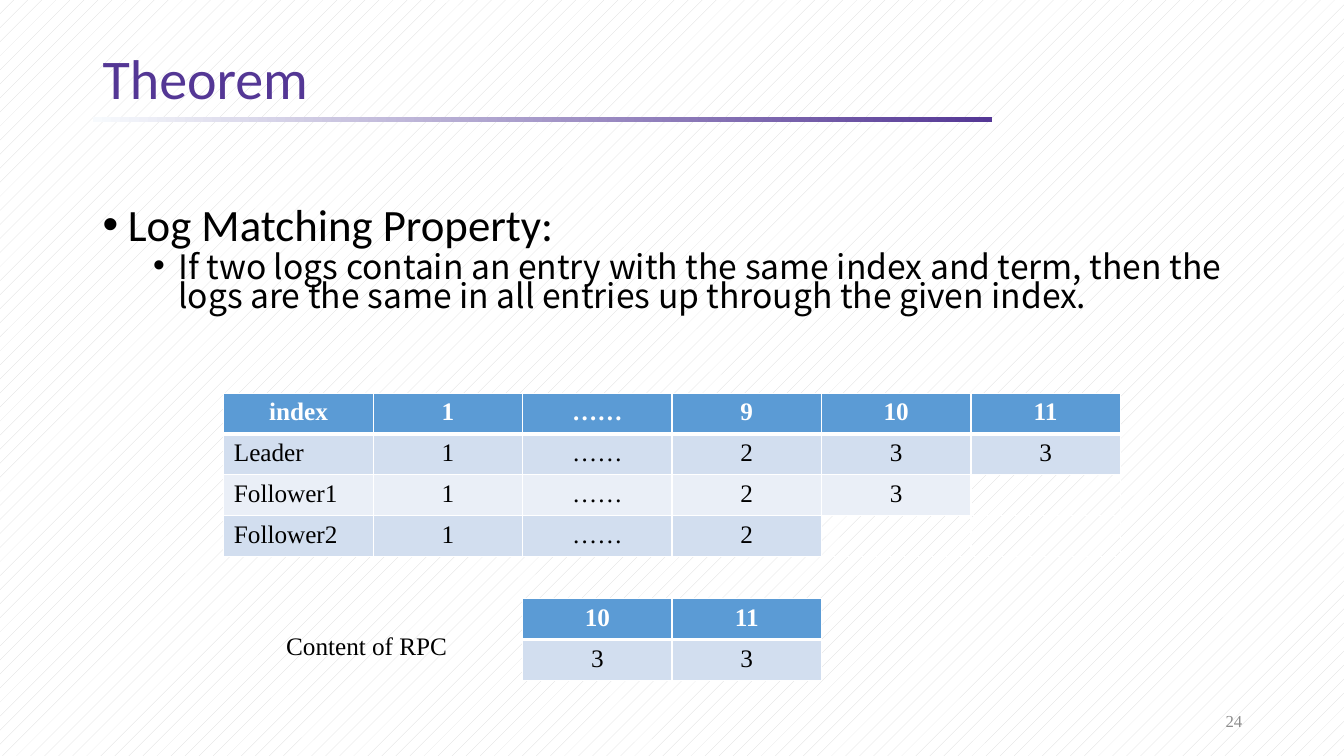
from lxml import etree
from pptx import Presentation
from pptx.dml.color import RGBColor
from pptx.enum.dml import MSO_PATTERN
from pptx.enum.shapes import MSO_SHAPE
from pptx.enum.text import MSO_ANCHOR, PP_ALIGN
from pptx.oxml.ns import qn
from pptx.util import Inches, Pt

LEFT, CENTER, RIGHT = PP_ALIGN.LEFT, PP_ALIGN.CENTER, PP_ALIGN.RIGHT
TOP, MIDDLE = MSO_ANCHOR.TOP, MSO_ANCHOR.MIDDLE
SERIF = "Times New Roman"
SANS = "Calibri"

# Content
TITLE = "Theorem"
# text, font, size, level, left indent, line spacing, space before
BULLETS = [
    ("Log Matching Property:", SANS, 32, 0, 0.25, 0.9, 0),
    ("If two logs contain an entry with the same index and term, "
     "then the logs are the same in all entries up through the given index.",
     "Noto Sans CJK SC", 24, 1, 0.75, 0.72, 4),
]
LOG_ROWS = [
    ["index", "1", "……", "9", "10", "11"],
    ["Leader", "1", "……", "2", "3", "3"],
    ["Follower1", "1", "……", "2", "3", ""],
    ["Follower2", "1", "……", "2", "", ""],
]
RPC_LABEL = "Content of RPC"
RPC_ROWS = [["10", "11"], ["3", "3"]]
PAGE_NUMBER = "24"

COLORS = {
    "purple": "543795", "pale": "F7FAFD", "black": "000000", "white": "FFFFFF",
    "hatch": "D9D9D9", "gray": "8C8C8C",
    "header": "5B9BD5", "odd_row": "D2DEEF", "even_row": "EAEFF7",
}

# Layout
MARGIN_LEFT, CONTENT_WIDTH = 0.92, 11.5
TABLE_LEFT, TABLE_TOP = 2.22, 3.9
COLUMN_WIDTH, ROW_HEIGHT = 1.482, 0.405
RPC_TOP = 5.94


def rgb(name):
    return RGBColor.from_string(COLORS[name])


def style(paragraph, font, size, color, align=LEFT, bold=False):
    paragraph.alignment = align
    paragraph.font.name = font
    paragraph.font.size = Pt(size)
    paragraph.font.bold = bold
    paragraph.font.color.rgb = rgb(color)


def add_text(slide, box, text, font, size, color, align=LEFT, anchor=TOP, wrap=True):
    shape = slide.shapes.add_textbox(*map(Inches, box))
    text_frame = shape.text_frame
    text_frame.word_wrap = wrap
    text_frame.vertical_anchor = anchor
    text_frame.text = text
    style(text_frame.paragraphs[0], font, size, color, align)
    return text_frame


def add_bullets(slide, box):
    text_frame = slide.shapes.add_textbox(*map(Inches, box)).text_frame
    text_frame.word_wrap = True
    for number, (text, font, size, level, indent, spacing, before) in enumerate(BULLETS):
        paragraph = text_frame.add_paragraph() if number else text_frame.paragraphs[0]
        paragraph.text = text
        paragraph.level = level
        paragraph.line_spacing = spacing
        paragraph.space_before = Pt(before)
        properties = paragraph._p.get_or_add_pPr()
        properties.set("marL", str(Inches(indent)))
        properties.set("indent", str(Inches(-0.25)))
        etree.SubElement(properties, qn("a:buFont"), typeface="Arial")
        etree.SubElement(properties, qn("a:buChar"), char="•")
        style(paragraph, font, size, "black")
        for run in paragraph.runs:
            east_asian = etree.SubElement(run._r.get_or_add_rPr(), qn("a:ea"))
            east_asian.set("typeface", font)


def add_borders(cell, row):
    # The line under the header is thicker than the others
    widths = {"L": 1, "R": 1, "T": 3 if row == 1 else 1, "B": 3 if row == 0 else 1}
    properties = cell._tc.get_or_add_tcPr()
    for side, width in widths.items():
        line = etree.SubElement(properties, qn(f"a:ln{side}"), w=str(Pt(width)))
        fill = etree.SubElement(line, qn("a:solidFill"))
        etree.SubElement(fill, qn("a:srgbClr"), val=COLORS["white"])


def add_log_table(slide, left, top, rows):
    count = len(rows[0])
    table = slide.shapes.add_table(
        len(rows), count, Inches(left), Inches(top),
        Inches(COLUMN_WIDTH * count), Inches(ROW_HEIGHT * len(rows))).table
    for column in table.columns:
        column.width = Inches(COLUMN_WIDTH)
    for row, values in enumerate(rows):
        table.rows[row].height = Inches(ROW_HEIGHT)
        for column, value in enumerate(values):
            cell = table.cell(row, column)
            add_borders(cell, row)
            header = row == 0
            if value:
                cell.fill.solid()
                band = "odd_row" if row % 2 else "even_row"
                cell.fill.fore_color.rgb = rgb("header" if header else band)
            else:
                cell.fill.background()
            cell.text = value
            is_name = column == 0 and row > 0 and not value.isdigit()
            style(cell.text_frame.paragraphs[0], SERIF, 18,
                  "white" if header else "black", LEFT if is_name else CENTER, header)


def main():
    presentation = Presentation()
    presentation.slide_width = Inches(13.33)
    presentation.slide_height = Inches(7.5)
    slide = presentation.slides.add_slide(presentation.slide_layouts[6])

    # Hatched background
    background = slide.background.fill
    background.patterned()
    background.pattern = MSO_PATTERN.PERCENT_5
    background.fore_color.rgb = rgb("hatch")
    background.back_color.rgb = rgb("white")

    # Title and fading rule
    rule = slide.shapes.add_shape(
        MSO_SHAPE.RECTANGLE, Inches(MARGIN_LEFT), Inches(1.16), Inches(8.92), Inches(0.05))
    rule.shadow.inherit = False
    rule.line.fill.background()
    rule.fill.gradient()
    rule.fill.gradient_angle = 0
    for stop, name, position in zip(rule.fill.gradient_stops, ("pale", "purple"), (0, 1)):
        stop.color.rgb = rgb(name)
        stop.position = position
    title = add_text(slide, (MARGIN_LEFT, 0.43, CONTENT_WIDTH, 0.75),
                     TITLE, SANS, 40, "purple", anchor=MIDDLE)
    title.paragraphs[0].line_spacing = 0.9

    # Statement of the property
    add_bullets(slide, (MARGIN_LEFT, 1.96, CONTENT_WIDTH, 1.6))

    # Logs and the call's content, lined up with the third column
    add_log_table(slide, TABLE_LEFT, TABLE_TOP, LOG_ROWS)
    add_log_table(slide, TABLE_LEFT + 2 * COLUMN_WIDTH, RPC_TOP, RPC_ROWS)
    add_text(slide, (2.74, 6.2, 1.8, 0.4), RPC_LABEL, SERIF, 18, "black", wrap=False)

    # Page number
    add_text(slide, (9.42, 6.95, 3, 0.4), PAGE_NUMBER, SERIF, 12, "gray", RIGHT, MIDDLE)

    presentation.save("out.pptx")


if __name__ == "__main__":
    main()
